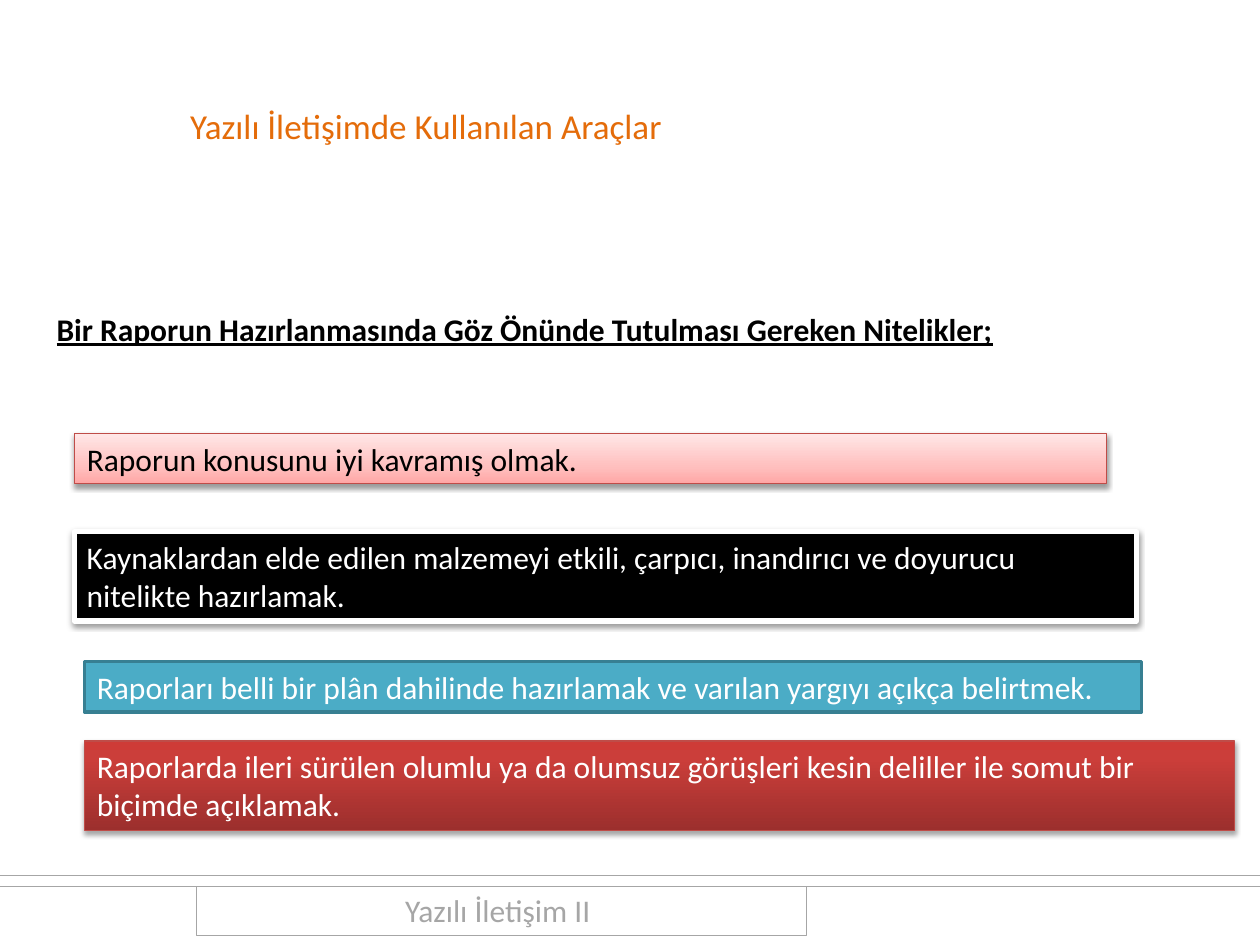
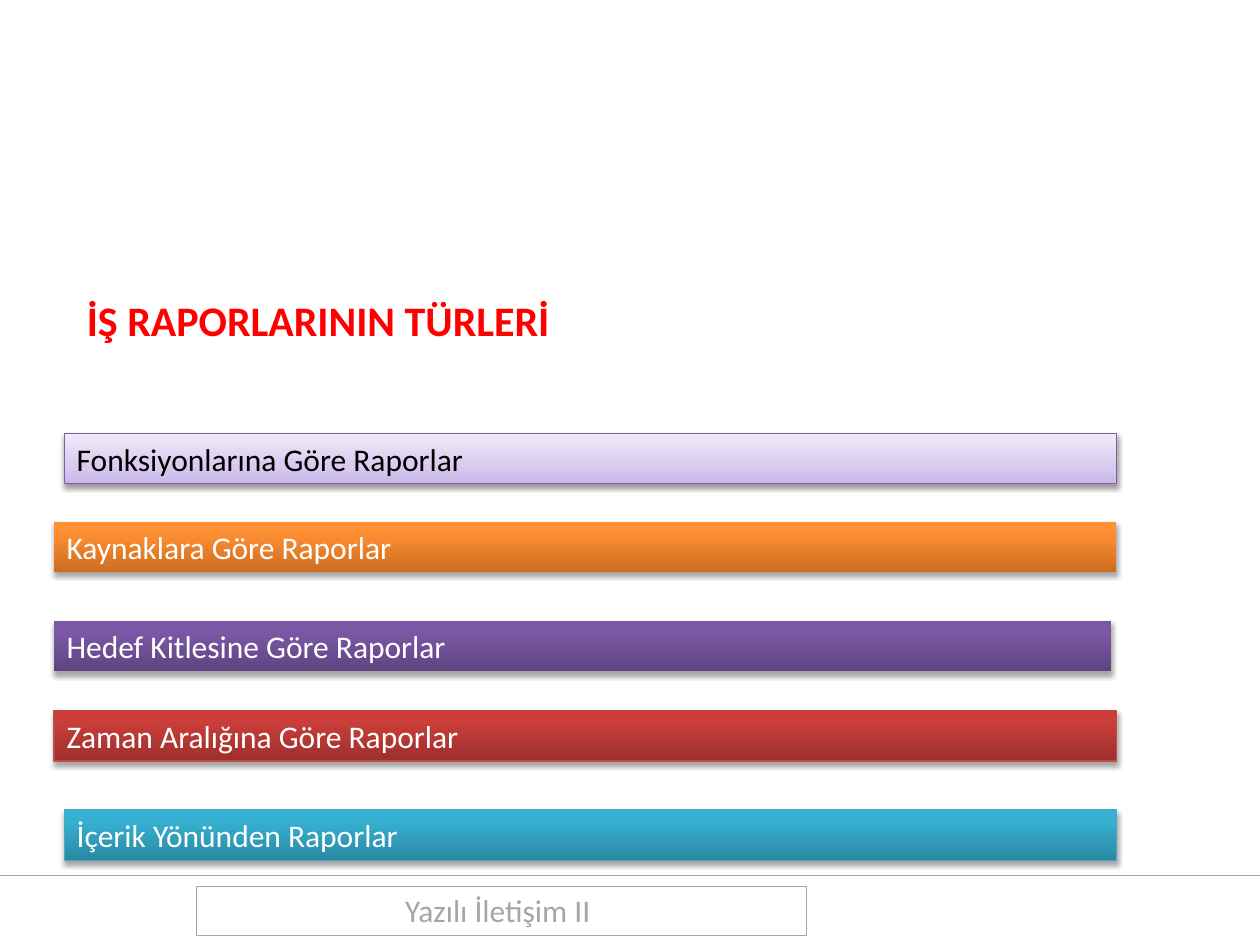
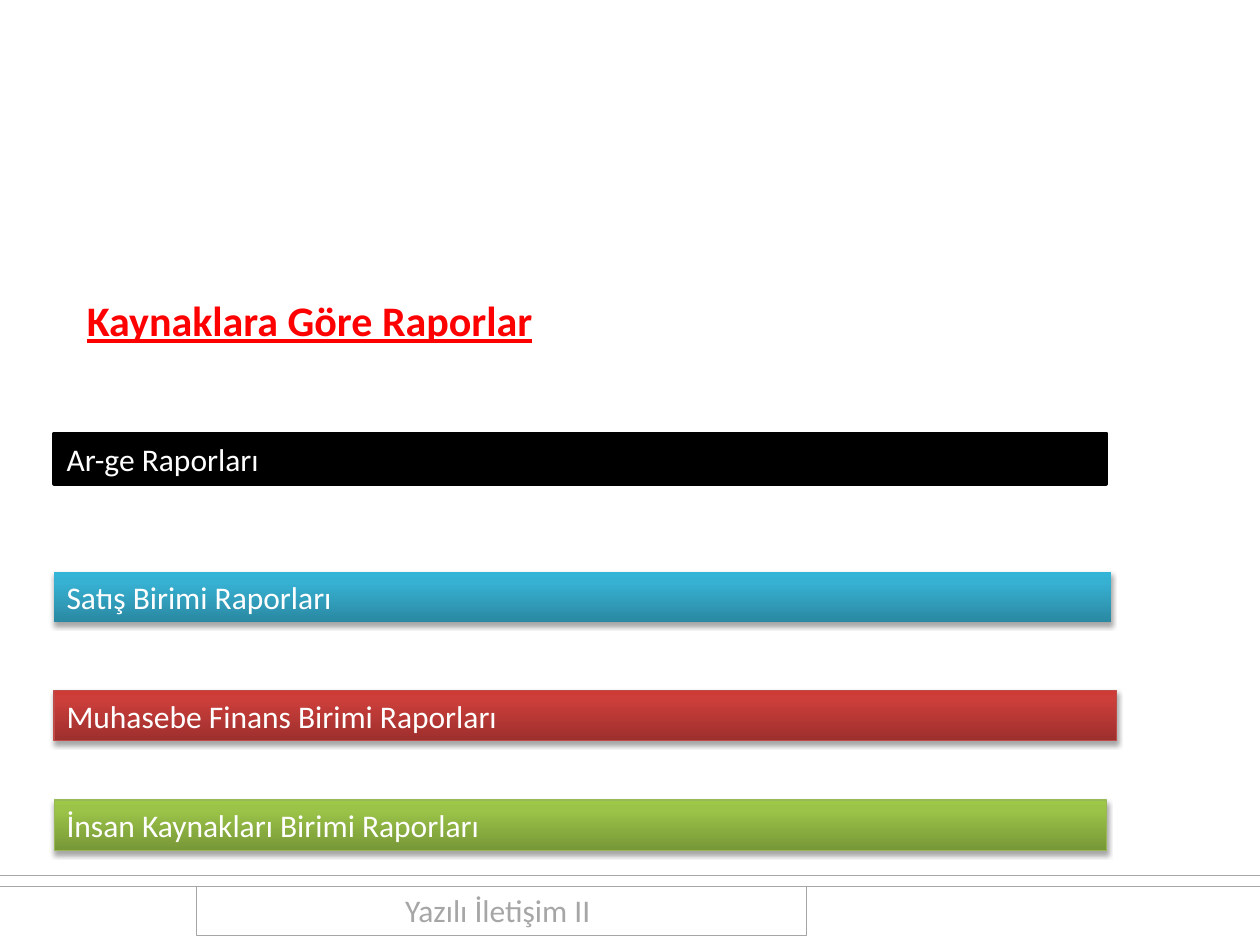
import copy
from dataclasses import dataclass
from typing import Optional

import pptx
import pptx.dml.color
import pptx.enum.shapes
import pptx.enum.text
import pptx.oxml
import pptx.oxml.ns
import pptx.util

Inches = pptx.util.Inches
Pt = pptx.util.Pt
PP_ALIGN = pptx.enum.text.PP_ALIGN
MSO_ANCHOR = pptx.enum.text.MSO_ANCHOR


@dataclass(frozen=True)
class Shadow:
    opacity: int
    blur: float
    distance: float


@dataclass(frozen=True)
class BarStyle:
    fill: tuple
    line: Optional[str] = None
    line_width: float = 0.75
    text: str = "FFFFFF"
    shadow: Optional[Shadow] = None


@dataclass(frozen=True)
class Theme:
    font: str = "Calibri"
    body_size: int = 18
    topic_size: int = 20
    title_size: int = 24
    black: str = "000000"
    red: str = "FF0000"
    orange: str = "E46C0A"
    gray: str = "A6A6A6"
    hairline: float = 0.25
    rule_shadow: Shadow = Shadow(40, 4, 3)


THEME = Theme()
SOFT = Shadow(38, 3.1, 1.6)
DEEP = Shadow(35, 3.1, 1.8)


def pale(*colors, line):
    return BarStyle(tuple(zip((0, 35, 100), colors)), line, text=THEME.black, shadow=SOFT)


def glossy(*colors, line=None):
    return BarStyle(tuple(zip((0, 80, 100), colors)), line, shadow=DEEP)


def flat(color, line, width, shadow=None):
    return BarStyle(((0, color),), line, width, shadow=shadow)


TEAL = ("2A88A2", "37B1D2", "34B4D6")
STYLES = {
    "pale red": pale("FFA6A5", "FFC0BF", "FFE7E7", line="BF4C48"),
    "pale purple": pale("C9B5E8", "D8CBEE", "F0EAF9", line="7D60A0"),
    "framed black": flat("000000", "FFFFFF", 3, SOFT),
    "black": flat("000000", "000000", 2),
    "flat teal": flat("4BACC6", "377F92", 2),
    "red": glossy("9C2F2D", "CB3E3A", "CE3B37", line="BF4C48"),
    "orange": glossy("CC6E20", "FF9034", "FF9136"),
    "purple": glossy("5F4480", "7B58A6", "7C57A8"),
    "teal": glossy(*TEAL),
    "lined teal": glossy(*TEAL, line="46AAC5"),
    "green": glossy("779737", "9BC348", "9DC746", line="98B955"),
}


def rgb(value):
    return pptx.dml.color.RGBColor.from_string(value)


def set_line(shape, color, width):
    if color is None:
        shape.line.fill.background()
    else:
        shape.line.color.rgb = rgb(color)
        shape.line.width = Pt(width)


def set_shadow(shape, shadow):
    ns = pptx.oxml.ns.nsdecls("a")
    inner = ""
    if shadow:
        inner = (
            f'<a:outerShdw blurRad="{Pt(shadow.blur)}" dist="{Pt(shadow.distance)}" '
            f'dir="5400000" rotWithShape="0"><a:srgbClr val="{THEME.black}">'
            f'<a:alpha val="{shadow.opacity * 1000}"/></a:srgbClr></a:outerShdw>'
        )
    effects = pptx.oxml.parse_xml(f"<a:effectLst {ns}>{inner}</a:effectLst>")
    shape._element.spPr.append(effects)


def set_fill(sp, stops):
    if len(stops) == 1:
        sp.fill.solid()
        sp.fill.fore_color.rgb = rgb(stops[0][1])
        return
    sp.fill.gradient()
    sp.fill.gradient_angle = 90
    gs_list = sp._element.spPr.find(".//" + pptx.oxml.ns.qn("a:gsLst"))
    gs_list.append(copy.deepcopy(gs_list[-1]))
    for stop, (position, color) in zip(sp.fill.gradient_stops, stops):
        stop.position = position / 100
        stop.color.rgb = rgb(color)


def write(sp, text, size, color, bold=False, underline=False,
          align=PP_ALIGN.LEFT, anchor=MSO_ANCHOR.TOP):
    tf = sp.text_frame
    tf.word_wrap = True
    tf.vertical_anchor = anchor
    p = tf.paragraphs[0]
    p.text = text
    p.alignment = align
    p.font.name = THEME.font
    p.font.size = Pt(size)
    p.font.bold = bold
    p.font.underline = underline
    p.font.color.rgb = rgb(color)


def add_rect(s, left, top, width, height):
    return s.shapes.add_shape(
        pptx.enum.shapes.MSO_SHAPE.RECTANGLE,
        Inches(left), Inches(top), Inches(width), Inches(height))


def add_heading(s, left, top, width, height, text, size, color, **font):
    sp = s.shapes.add_textbox(Inches(left), Inches(top), Inches(width), Inches(height))
    write(sp, text, size, color, **font)


def add_title(s, text, underline=False):
    add_heading(s, 0.59, 2.29, 5.31, 0.5, text, THEME.title_size, THEME.red,
                bold=True, underline=underline)


def add_rule(s, y):
    line = s.shapes.add_connector(
        pptx.enum.shapes.MSO_CONNECTOR.STRAIGHT, 0, Inches(y), Inches(10), Inches(y))
    set_line(line, THEME.gray, THEME.hairline)
    set_shadow(line, THEME.rule_shadow)


def add_footer(s, rules=(7.03, 6.95)):
    for y in rules:
        add_rule(s, y)
    sp = add_rect(s, 1.56, 7.03, 4.84, 0.39)
    sp.fill.background()
    set_line(sp, THEME.gray, THEME.hairline)
    set_shadow(sp, None)
    write(sp, "Yazılı İletişim II ", THEME.body_size, THEME.gray,
          align=PP_ALIGN.CENTER, anchor=MSO_ANCHOR.MIDDLE)


def add_bar(s, left, top, width, style_name, text, height=0.4):
    style = STYLES[style_name]
    sp = add_rect(s, left, top, width, height)
    set_fill(sp, style.fill)
    set_line(sp, style.line, style.line_width)
    set_shadow(sp, style.shadow)
    write(sp, text, THEME.body_size, style.text)


def add_bars(s, bars):
    for bar in bars:
        add_bar(s, *bar)


def build_qualities(s):
    add_footer(s)
    add_heading(s, 1.41, 0.78, 5.31, 0.44, "Yazılı İletişimde Kullanılan Araçlar",
                THEME.topic_size, THEME.orange)
    add_heading(s, 0.35, 2.41, 7.95, 0.4,
                "Bir Raporun Hazırlanmasında Göz Önünde Tutulması Gereken Nitelikler;",
                THEME.body_size, THEME.black, bold=True, underline=True)
    add_bars(s, [
        (0.59, 3.44, 8.19, "pale red", "Raporun konusunu iyi kavramış olmak."),
        (0.59, 4.22, 8.43, "framed black",
         "Kaynaklardan elde edilen malzemeyi etkili, çarpıcı, inandırıcı ve doyurucu "
         "nitelikte hazırlamak.", 0.71),
        (0.67, 5.25, 8.39, "flat teal",
         "Raporları belli bir plân dahilinde hazırlamak ve varılan yargıyı açıkça belirtmek."),
        (0.67, 5.88, 9.13, "red",
         "Raporlarda ileri sürülen olumlu ya da olumsuz görüşleri kesin deliller ile somut bir "
         "biçimde açıklamak.", 0.71),
    ])


def build_report_types(s):
    add_footer(s, rules=(6.95,))
    add_title(s, "İŞ RAPORLARININ TÜRLERİ")
    add_bars(s, [
        (0.51, 3.44, 8.35, "pale purple", "Fonksiyonlarına Göre Raporlar"),
        (0.43, 4.14, 8.43, "orange", "Kaynaklara Göre Raporlar"),
        (0.43, 4.93, 8.39, "purple", "Hedef Kitlesine Göre Raporlar"),
        (0.43, 5.64, 8.43, "red", "Zaman Aralığına Göre Raporlar"),
        (0.51, 6.43, 8.35, "lined teal", "İçerik Yönünden Raporlar"),
    ])


def build_report_sources(s):
    add_footer(s)
    add_title(s, "Kaynaklara Göre Raporlar", underline=True)
    add_bars(s, [
        (0.43, 3.44, 8.35, "black", "Ar-ge Raporları"),
        (0.43, 4.54, 8.39, "teal", "Satış Birimi Raporları"),
        (0.43, 5.48, 8.43, "red", "Muhasebe Finans Birimi Raporları"),
        (0.43, 6.35, 8.35, "green", "İnsan Kaynakları Birimi Raporları"),
    ])


def main():
    prs = pptx.Presentation()
    prs.slide_width = Inches(10)
    prs.slide_height = Inches(7.5)
    for build in (build_qualities, build_report_types, build_report_sources):
        build(prs.slides.add_slide(prs.slide_layouts[6]))
    prs.save("out.pptx")


if __name__ == "__main__":
    main()
